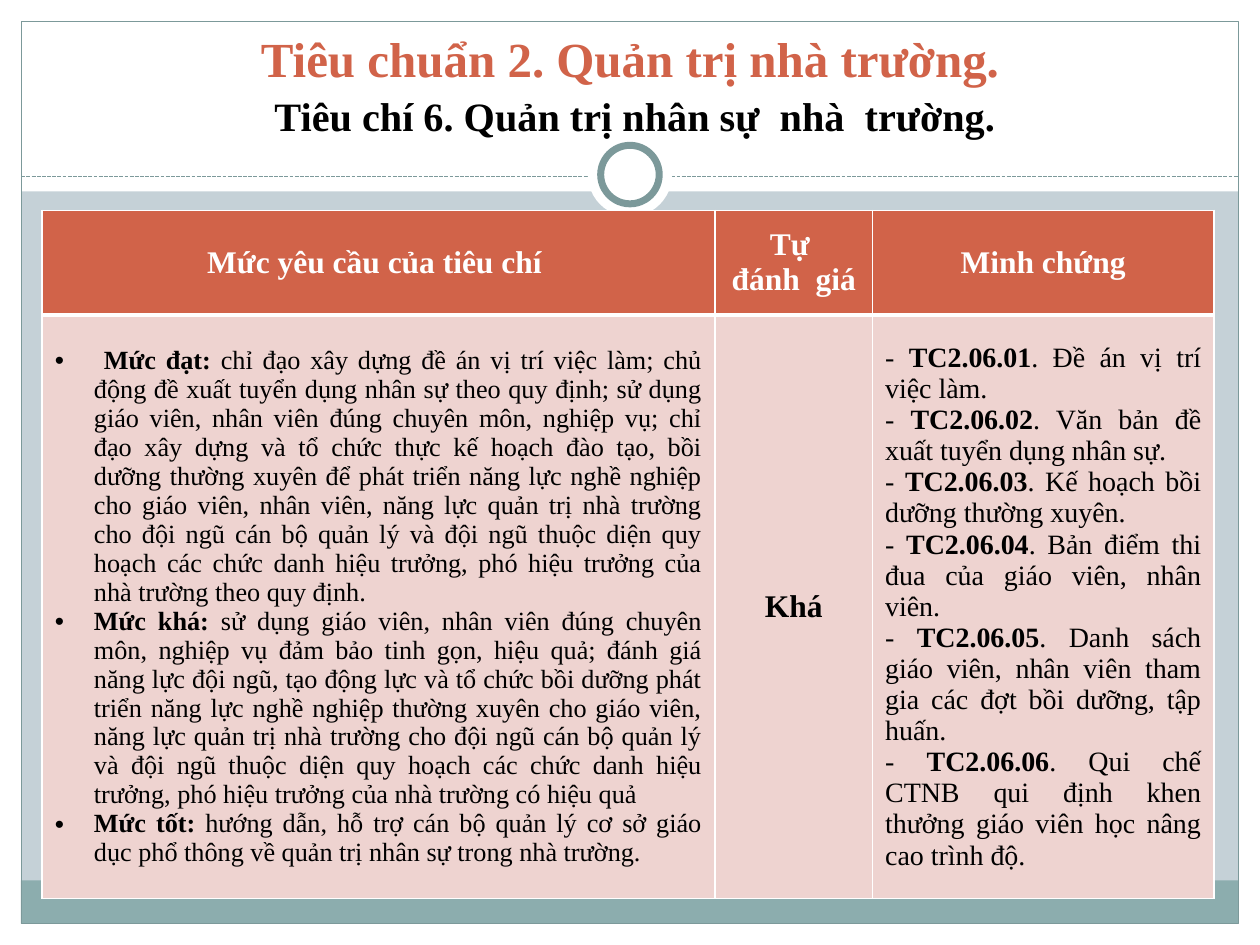
from lxml import etree
from pptx import Presentation
from pptx import util as u
from pptx.dml import color
from pptx.enum import dml, shapes, text
from pptx.oxml import ns

FONT = "Times New Roman"
WHITE, BLACK, TEAL, RUST, PINK = "FFFFFF", "000000", "7C999A", "D16349", "EED3D0"
CENTER, JUSTIFY = text.PP_ALIGN.CENTER, text.PP_ALIGN.JUSTIFY


def rgb(value):
    return color.RGBColor.from_string(value)


def add_spans(para, align, spans):
    para.alignment = align
    for words, size, bold, tint in spans:
        span = para.add_run()
        span.text = words
        span.font.name = FONT
        span.font.size = u.Pt(size)
        span.font.bold = bold
        span.font.color.rgb = rgb(tint)


deck = Presentation()
deck.slide_width, deck.slide_height = u.Cm(25.4), u.Cm(19.05)
page = deck.slides.add_slide(deck.slide_layouts[6])
page.background.fill.solid()
page.background.fill.fore_color.rgb = rgb("C5D1D7")

rectangle, oval = shapes.MSO_SHAPE.RECTANGLE, shapes.MSO_SHAPE.OVAL
frame_parts = [
    (rectangle, 0, 18.62, 25.4, 0.43, WHITE, 0),
    (rectangle, 0, 0, 25.4, 3.86, WHITE, 0),
    (rectangle, 0, 0, 0.43, 19.05, WHITE, 0),
    (rectangle, 24.97, 0, 0.43, 19.05, WHITE, 0),
    (rectangle, 0.42, 17.75, 24.54, 0.87, "8CADAE", 0),
    (rectangle, 0.43, 0.43, 24.54, 18.19, None, 0.75),
    (oval, 11.85, 2.67, 1.7, 1.7, WHITE, 0),
    (oval, 12.11, 2.93, 1.18, 1.18, WHITE, 4),
]
for kind, left, top, width, height, fill, line_width in frame_parts:
    if kind == oval and not line_width:
        divider = page.shapes.add_connector(
            shapes.MSO_CONNECTOR.STRAIGHT, u.Cm(0.43), u.Cm(3.56), u.Cm(24.97), u.Cm(3.56))
        divider.line.color.rgb = rgb(TEAL)
        divider.line.width = u.Pt(0.75)
        divider.line.dash_style = dml.MSO_LINE.SQUARE_DOT
        etree.SubElement(divider._element.spPr, ns.qn("a:effectLst"))
    part = page.shapes.add_shape(kind, u.Cm(left), u.Cm(top), u.Cm(width), u.Cm(height))
    part.shadow.inherit = False
    if fill:
        part.fill.solid()
        part.fill.fore_color.rgb = rgb(fill)
    else:
        part.fill.background()
    if line_width:
        part.line.color.rgb = rgb(TEAL)
        part.line.width = u.Pt(line_width)
    else:
        part.line.fill.background()

title = page.shapes.add_textbox(u.Cm(0.85), u.Cm(0.2), u.Cm(23.7), u.Cm(2.75)).text_frame
title.word_wrap = True
title.vertical_anchor = text.MSO_ANCHOR.BOTTOM
heading = title.paragraphs[0]
add_spans(heading, CENTER, [("Tiêu chuẩn 2. Quản trị nhà trường.", 28, True, RUST)])
heading.add_line_break()
add_spans(heading, CENTER, [
    (" ", 25, True, RUST),
    ("Tiêu chí 6. Quản trị nhân sự  nhà  trường.", 23, True, BLACK),
])

levels = [
    (" ", "Mức đạt: ",
     "chỉ đạo xây dựng đề án vị trí việc làm; chủ động đề xuất tuyển dụng nhân sự theo quy định; "
     "sử dụng giáo viên, nhân viên đúng chuyên môn, nghiệp vụ; chỉ đạo xây dựng và tổ chức thực "
     "kế hoạch đào tạo, bồi dưỡng thường xuyên để phát triển năng lực nghề nghiệp cho giáo viên, "
     "nhân viên, năng lực quản trị nhà trường cho đội ngũ cán bộ quản lý và đội ngũ thuộc diện quy "
     "hoạch các chức danh hiệu trưởng, phó hiệu trưởng của nhà trường theo quy định."),
    ("", "Mức khá: ",
     "sử dụng giáo viên, nhân viên đúng chuyên môn, nghiệp vụ đảm bảo tinh gọn, hiệu quả; đánh giá "
     "năng lực đội ngũ, tạo động lực và tổ chức bồi dưỡng phát triển năng lực nghề nghiệp thường "
     "xuyên cho giáo viên, năng lực quản trị nhà trường cho đội ngũ cán bộ quản lý và đội ngũ thuộc "
     "diện quy hoạch các chức danh hiệu trưởng, phó hiệu trưởng của nhà trường có hiệu quả"),
    ("", "Mức tốt:",
     " hướng dẫn, hỗ trợ cán bộ quản lý cơ sở giáo dục phổ thông về quản trị nhân sự trong nhà trường."),
]
evidence = [
    "Đề án vị trí việc làm.",
    "Văn bản đề xuất tuyển dụng nhân sự.",
    "Kế hoạch bồi dưỡng thường xuyên.",
    "Bản điểm thi đua của giáo viên, nhân viên.",
    "Danh sách giáo viên, nhân viên tham gia các đợt bồi dưỡng, tập huấn.",
    "Qui chế CTNB qui định khen thưởng giáo viên học nâng cao trình độ.",
]
headers = [["Mức yêu cầu của tiêu chí "], ["Tự ", "đánh  giá"], ["Minh chứng"]]

header_row = [[[(words, 18, True, WHITE)] for words in lines] for lines in headers]
level_cell = [
    [(words, 15, bold, BLACK) for words, bold in ((lead, False), (name, True), (body, False)) if words]
    for lead, name, body in levels
]
evidence_cell = [
    [("- ", 16, False, BLACK), (f"TC2.06.{number:02}", 16, True, BLACK), (f". {words}", 16, False, BLACK)]
    for number, words in enumerate(evidence, 1)
]
body_row = [level_cell, [[("Khá", 18, True, BLACK)]], evidence_cell]

table = page.shapes.add_table(2, 3, u.Cm(0.85), u.Cm(4.24), u.Cm(23.62), u.Cm(13.31)).table
for column, width in zip(table.columns, (13.56, 3.18, 6.88)):
    column.width = u.Cm(width)
for row, height in zip(table.rows, (2.11, 11.2)):
    row.height = u.Cm(height)

for r, row in enumerate((header_row, body_row)):
    for c, paragraphs in enumerate(row):
        cell = table.cell(r, c)
        cell.vertical_anchor = text.MSO_ANCHOR.MIDDLE
        box = cell.text_frame
        for i, spans in enumerate(paragraphs):
            para = box.paragraphs[0] if i == 0 else box.add_paragraph()
            add_spans(para, JUSTIFY if r == 1 and c != 1 else CENTER, spans)
            if r == 1 and c == 0:
                props = para._p.get_or_add_pPr()
                props.set("marL", str(u.Cm(0.79)))
                props.set("indent", str(u.Cm(-0.79)))
                etree.SubElement(props, ns.qn("a:buFont"), typeface="Arial")
                etree.SubElement(props, ns.qn("a:buChar"), char="•")
        cell_props = cell._tc.get_or_add_tcPr()
        for side in "LRTB":
            thick = (r, side) in ((0, "B"), (1, "T"))
            border = etree.SubElement(cell_props, ns.qn(f"a:ln{side}"), w=str(u.Pt(3 if thick else 1)))
            paint = etree.SubElement(border, ns.qn("a:solidFill"))
            etree.SubElement(paint, ns.qn("a:srgbClr"), val=WHITE)
        cell.fill.solid()
        cell.fill.fore_color.rgb = rgb(PINK if r else RUST)

deck.save("out.pptx")
